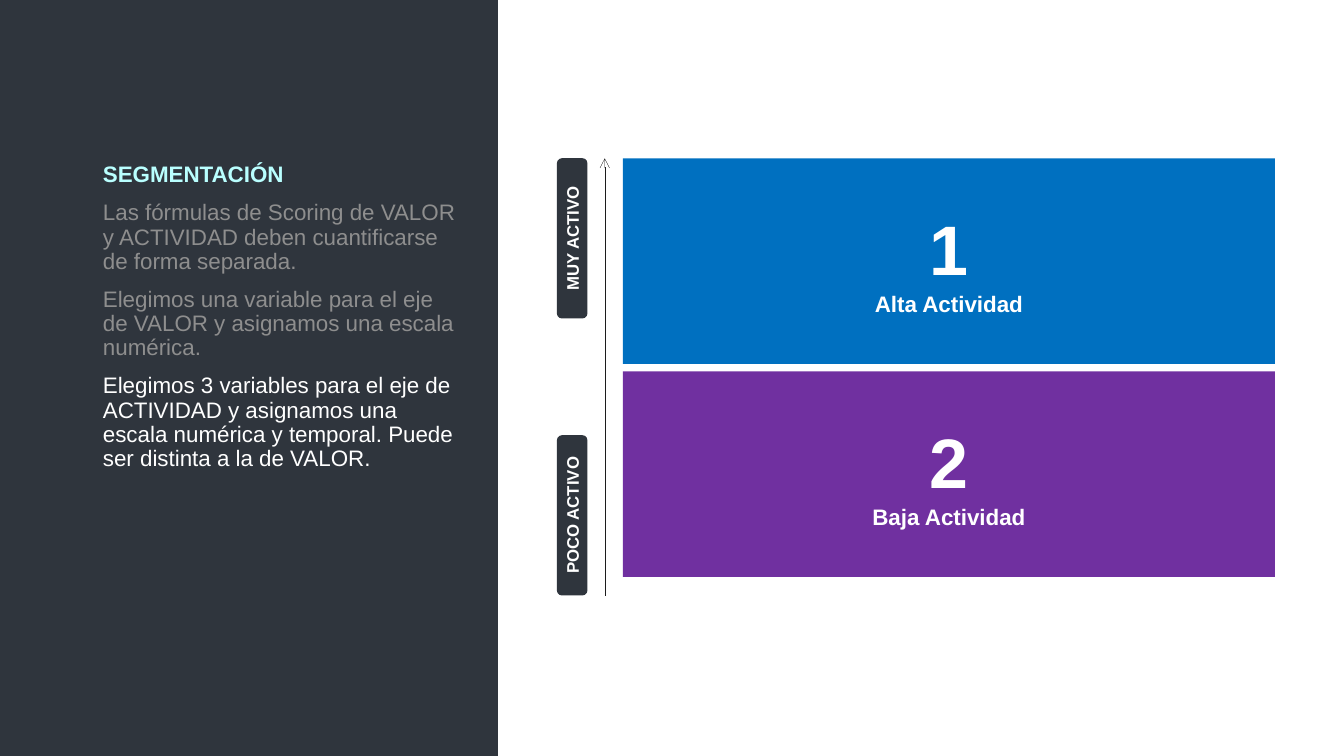
import pptx
import pptx.util
import pptx.dml.color
import pptx.enum.shapes
import pptx.enum.text
import pptx.oxml.ns
import lxml.etree

Cm = pptx.util.Cm
Pt = pptx.util.Pt
RGBColor = pptx.dml.color.RGBColor
MSO_SHAPE = pptx.enum.shapes.MSO_SHAPE
CENTER = pptx.enum.text.PP_ALIGN.CENTER
ANCHOR = pptx.enum.text.MSO_ANCHOR
qn = pptx.oxml.ns.qn

SLATE = RGBColor(0x2F, 0x35, 0x3D)
BLUE = RGBColor(0x00, 0x70, 0xC0)
PURPLE = RGBColor(0x70, 0x30, 0xA0)
AQUA = RGBColor(0xB9, 0xFF, 0xFF)
GREY = RGBColor(0x8E, 0x8E, 0x8E)
WHITE = RGBColor(0xFF, 0xFF, 0xFF)
INK = RGBColor(0x1C, 0x1C, 0x1C)


def add_span(para, text, size, color, bold):
    span = para.add_run()
    span.text = text
    span.font.name = "Arial"
    span.font.size = Pt(size)
    span.font.bold = bold
    span.font.color.rgb = color


def add_block(kind, left, top, width, height, color, lines=()):
    block = page.shapes.add_shape(kind, Cm(left), Cm(top), Cm(width), Cm(height))
    block.shadow.inherit = False
    block.fill.solid()
    block.fill.fore_color.rgb = color
    block.line.fill.background()
    frame = block.text_frame
    frame.vertical_anchor = ANCHOR.MIDDLE
    for index, (text, size) in enumerate(lines):
        para = frame.add_paragraph() if index else frame.paragraphs[0]
        para.alignment = CENTER
        add_span(para, text, size, WHITE, True)
    return block


deck = pptx.Presentation()
deck.slide_width = Cm(33.87)
deck.slide_height = Cm(19.05)
page = deck.slides.add_slide(deck.slide_layouts[1])
title = page.shapes.title.element
title.getparent().remove(title)
body = page.placeholders[1]

side_panel = add_block(MSO_SHAPE.RECTANGLE, 0, 0, 12.55, 19.05, SLATE)
body.element.addprevious(side_panel.element)

body.left, body.top, body.width, body.height = Cm(2.34), Cm(3.99), Cm(9.4), Cm(13.16)
frame = body.text_frame
frame.word_wrap = True
frame.auto_size = pptx.enum.text.MSO_AUTO_SIZE.NONE
frame.vertical_anchor = ANCHOR.TOP
body_lines = [
    ("SEGMENTACIÓN", AQUA, True),
    ("Las fórmulas de Scoring de VALOR y ACTIVIDAD deben cuantificarse de forma separada.", GREY, False),
    ("Elegimos una variable para el eje de VALOR y asignamos una escala numérica.", GREY, False),
    ("Elegimos 3 variables para el eje de ACTIVIDAD y asignamos una escala numérica y temporal. "
     "Puede ser distinta a la de VALOR.", WHITE, False),
]
for index, (text, color, bold) in enumerate(body_lines):
    para = frame.add_paragraph() if index else frame.paragraphs[0]
    properties = para._p.get_or_add_pPr()
    properties.set("marL", "0")
    properties.set("indent", "0")
    lxml.etree.SubElement(properties, qn("a:buNone"))
    para.line_spacing = 0.9
    para.space_before = Pt(10 if index else 0)
    add_span(para, text, 16, color, bold)

segments = [("1", "Alta Actividad", BLUE), ("2", "Baja Actividad", PURPLE)]
for index, (number, name, color) in enumerate(segments):
    add_block(MSO_SHAPE.RECTANGLE, 15.7, 3.99 + index * 5.37, 16.43, 5.18, color,
              [(number, 50), (name, 16)])

for text, top in (("MUY ACTIVO", 5.62), ("POCO ACTIVO", 12.6)):
    label = add_block(MSO_SHAPE.ROUNDED_RECTANGLE, 12.4, top, 4.04, 0.77, SLATE, [(text, 12)])
    label.rotation = 270

axis = page.shapes.add_connector(pptx.enum.shapes.MSO_CONNECTOR.STRAIGHT,
                                 Cm(15.24), Cm(3.99), Cm(15.24), Cm(15.01))
axis.line.color.rgb = INK
axis.line.width = Pt(0.25)
lxml.etree.SubElement(axis.line._get_or_add_ln(), qn("a:headEnd"), type="arrow")
lxml.etree.SubElement(axis.element.spPr, qn("a:effectLst"))

deck.save("out.pptx")
